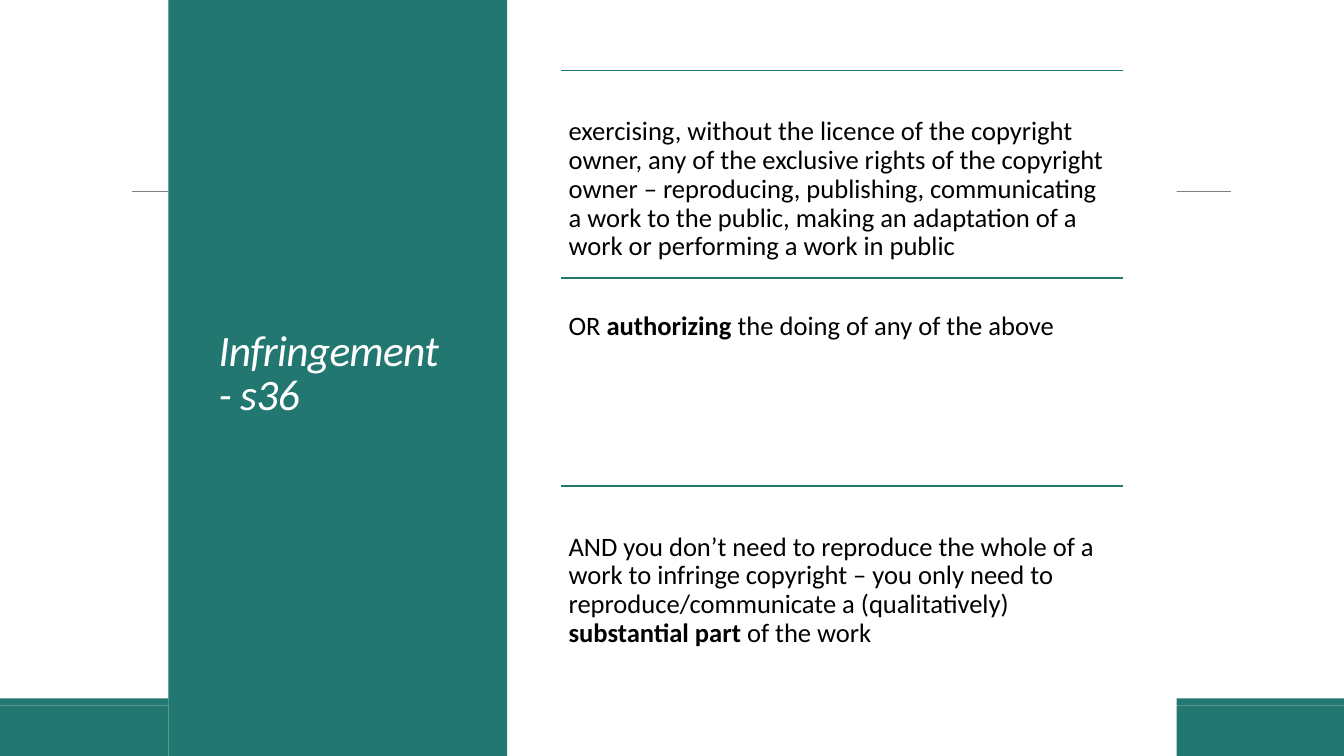
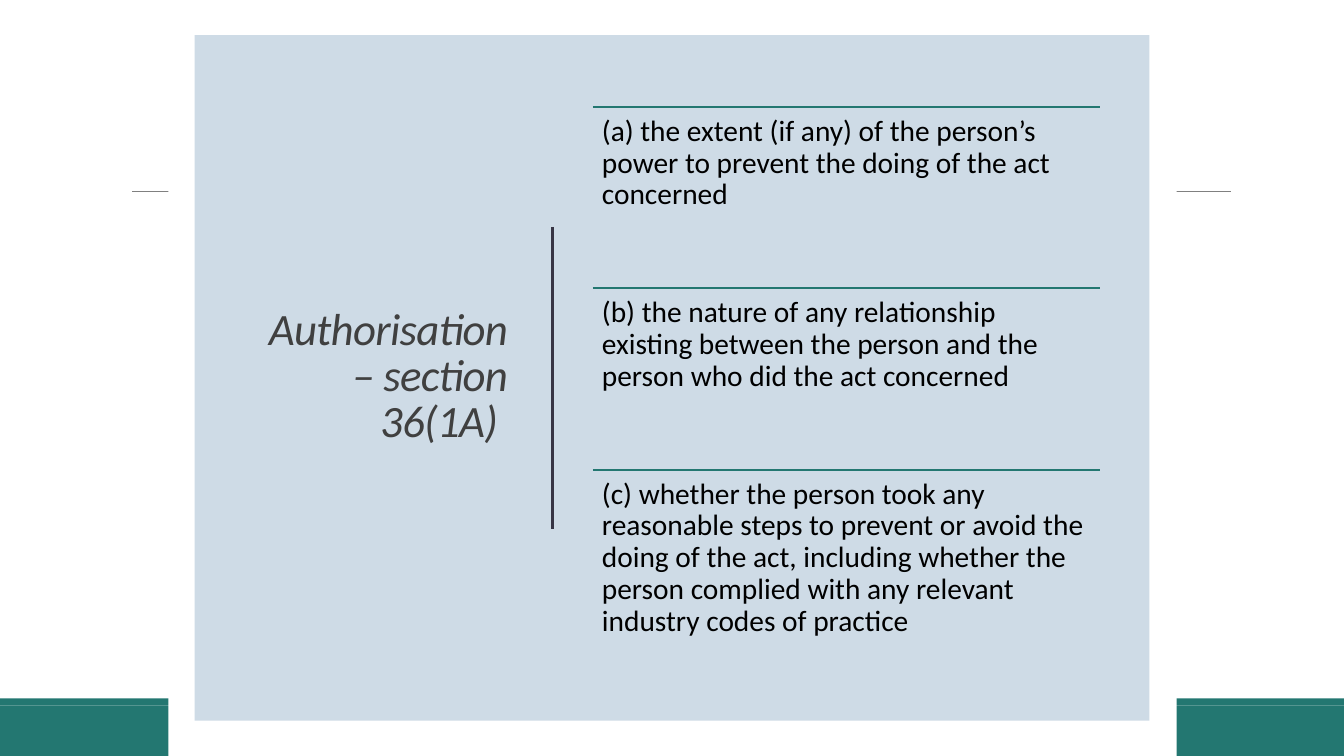
from dataclasses import dataclass
from lxml.etree import SubElement
from pptx import Presentation
from pptx.dml.color import RGBColor
from pptx.enum.shapes import MSO_CONNECTOR, MSO_SHAPE
from pptx.enum.text import MSO_ANCHOR, PP_ALIGN
from pptx.oxml.ns import qn
from pptx.util import Inches, Pt


@dataclass(frozen=True)
class Theme:
    font: str = "Calibri"
    teal: str = "237771"
    pale_blue: str = "CEDBE6"
    white: str = "FFFFFF"
    black: str = "000000"
    title_grey: str = "404040"
    line_grey: str = "808080"
    dark: str = "373545"
    hairline: float = 0.5
    rule: float = 1.25
    divider: float = 1.5
    title_spacing: str = "-50"
    title_leading: float = 0.85
    body_leading: float = 0.9


theme = Theme()


def add_line(slide, start, end, color, width):
    line = slide.shapes.add_connector(
        MSO_CONNECTOR.STRAIGHT, *[Inches(value) for value in (*start, *end)])
    line.line.color.rgb = RGBColor.from_string(color)
    line.line.width = Pt(width)
    SubElement(line._element.spPr, qn("a:effectLst"))


def add_text(slide, box, runs, size, color, leading):
    """Runs are texts; every second one is bold."""
    shape = slide.shapes.add_textbox(*[Inches(value) for value in box])
    frame = shape.text_frame
    frame.word_wrap = True
    paragraph = frame.paragraphs[0]
    paragraph.line_spacing = leading
    paragraph.font.name = theme.font
    paragraph.font.size = Pt(size)
    paragraph.font.color.rgb = RGBColor.from_string(color)
    for index, text in enumerate(runs):
        run = paragraph.add_run()
        run.text = text
        if index % 2:
            run.font.bold = True
    return frame


# Shared background: footer bands and the white page
background = [
    ((0, 7, 13.33, 0.5), theme.teal),
    ((0, 6.93, 13.33, 0.07), theme.teal),
    ((1.67, 0, 10, 7.5), theme.white),
]

# Content of each slide
pages = [
    {
        "panels": [((1.67, 0, 3.32, 7.5), theme.teal),
                   ((4.98, 0, 0.05, 7.5), theme.teal)],
        "title": "Infringement - s36",
        "title_box": (2.07, 0.57, 2.53, 6.31),
        "title_size": 31,
        "title_color": theme.white,
        "title_align": PP_ALIGN.LEFT,
        "divider": None,
        "list_box": (5.56, 0.7, 5.58), "pitch": 2.06,
        "size": 19, "inset": 0.08, "top_inset": 0.47,
        "items": [
            ["exercising, without the licence of the copyright owner, any of "
             "the exclusive rights of the copyright owner – reproducing, "
             "publishing, communicating a work to the public, making an "
             "adaptation of a work or performing a work in public"],
            ["OR ", "authorizing", " the doing of any of the above"],
            ["AND you don’t need to reproduce the whole of a work to infringe "
             "copyright – you only need to reproduce/communicate a "
             "(qualitatively) ", "substantial part ", "of the work"],
        ],
    },
    {
        "panels": [((1.93, 0.35, 9.47, 6.8), theme.pale_blue)],
        "title": "Authorisation – section 36(1A) ",
        "title_box": (2.46, 1.05, 2.67, 5.4),
        "title_size": 32,
        "title_color": theme.title_grey,
        "title_align": PP_ALIGN.RIGHT,
        "divider": ((5.48, 2.25), (5.48, 5.25)),
        "list_box": (5.88, 1.06, 5.03), "pitch": 1.8,
        "size": 21, "inset": 0.09, "top_inset": 0.09,
        "items": [
            ["(a) the extent (if any) of the person’s power to prevent the "
             "doing of the act concerned"],
            ["(b) the nature of any relationship existing between the person "
             "and the person who did the act concerned"],
            ["(c) whether the person took any reasonable steps to prevent or "
             "avoid the doing of the act, including whether the person "
             "complied with any relevant industry codes of practice"],
        ],
    },
]

presentation = Presentation()
presentation.slide_width = Inches(13.33)
presentation.slide_height = Inches(7.5)

for page in pages:
    slide = presentation.slides.add_slide(presentation.slide_layouts[6])

    # Header line, bands and panels
    add_line(slide, (1.31, 1.9), (12.21, 1.9), theme.line_grey, theme.hairline)
    for box, color in background + page["panels"]:
        shape = slide.shapes.add_shape(
            MSO_SHAPE.RECTANGLE, *[Inches(value) for value in box])
        shape.shadow.inherit = False
        shape.fill.solid()
        shape.fill.fore_color.rgb = RGBColor.from_string(color)
        shape.line.fill.background()

    # Title
    frame = add_text(slide, page["title_box"], [page["title"]],
                     page["title_size"], page["title_color"],
                     theme.title_leading)
    frame.vertical_anchor = MSO_ANCHOR.MIDDLE
    paragraph = frame.paragraphs[0]
    paragraph.alignment = page["title_align"]
    paragraph.font.italic = True
    paragraph.runs[0].font._element.set("spc", theme.title_spacing)
    if page["divider"]:
        add_line(slide, *page["divider"], theme.dark, theme.divider)

    # Ruled list
    left, first_top, width = page["list_box"]
    for index, runs in enumerate(page["items"]):
        top = first_top + index * page["pitch"]
        add_line(slide, (left, top), (left + width, top), theme.teal, theme.rule)
        frame = add_text(slide, (left, top, width, page["pitch"]), runs,
                         page["size"], theme.black, theme.body_leading)
        frame.margin_left = frame.margin_right = Inches(page["inset"])
        frame.margin_bottom = Inches(page["inset"])
        frame.margin_top = Inches(page["top_inset"])

presentation.save("out.pptx")
